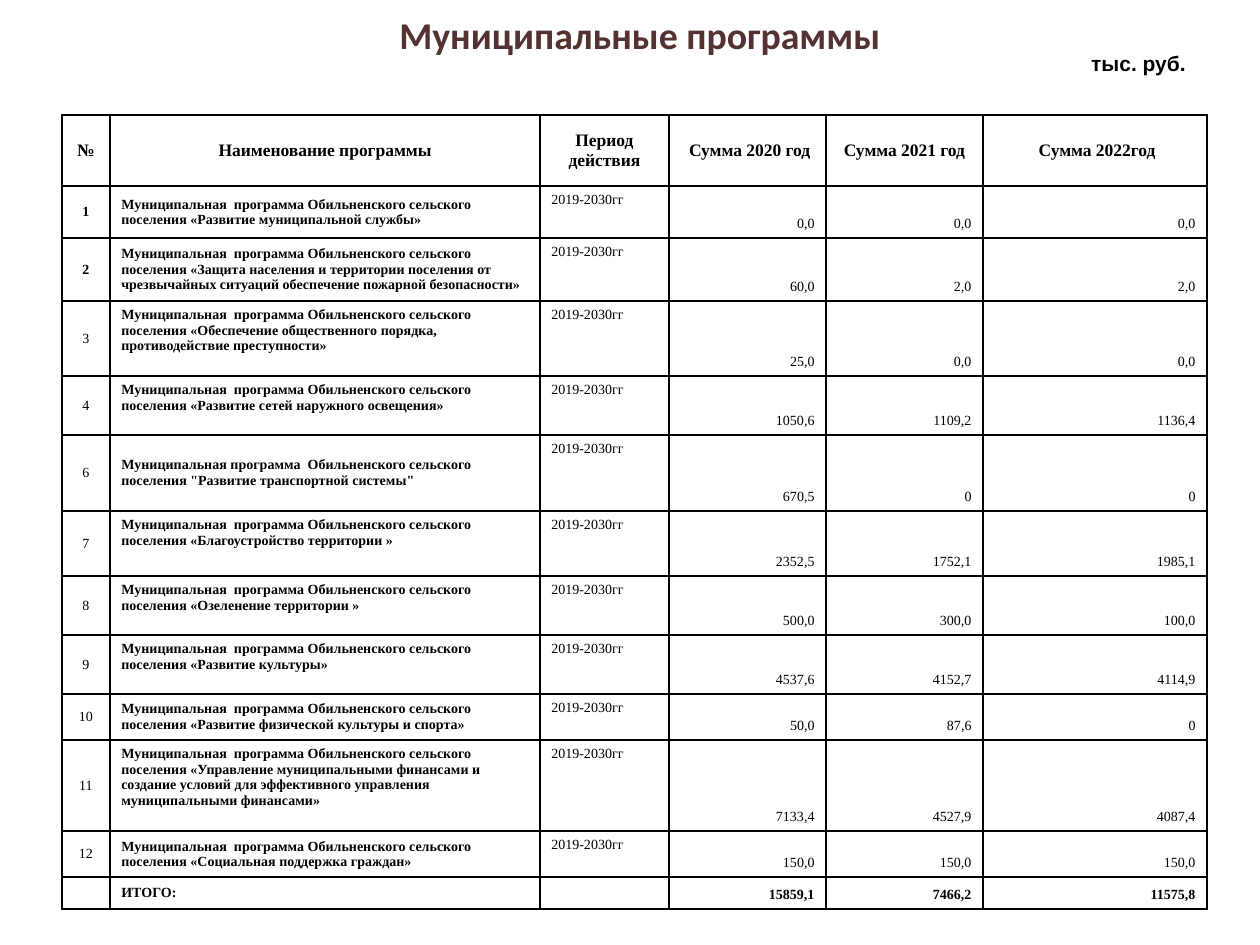
from lxml import etree
from pptx import Presentation
from pptx import util as u
from pptx.dml.color import RGBColor
from pptx.enum import text
from pptx.oxml import ns

PX = 914400 / 126
BLACK = RGBColor(0, 0, 0)
BROWN = RGBColor(0x54, 0x32, 0x32)
SERIF = "Times New Roman"
LEFT, MID, RIGHT = text.PP_ALIGN.LEFT, text.PP_ALIGN.CENTER, text.PP_ALIGN.RIGHT
TOP, CENTER, BOTTOM = (text.MSO_ANCHOR.TOP, text.MSO_ANCHOR.MIDDLE,
                       text.MSO_ANCHOR.BOTTOM)

COLS = [48, 430, 129, 157, 157, 224]
ROWS = [71, 52, 59, 75, 59, 76, 65, 59, 59, 46, 91, 45, 32]
HEAD = ["№", "Наименование программы", "Период действия",
        " Сумма 2020 год", "Сумма 2021 год", " Сумма 2022год"]
OWNER = "Муниципальная  программа Обильненского сельского поселения "
TERM = "2019-2030гг"
PLANS = [
    ("1", OWNER + "«Развитие муниципальной службы»", "0,0", "0,0", "0,0"),
    ("2", OWNER + "«Защита населения и территории поселения от чрезвычайных "
     "ситуаций обеспечение пожарной безопасности»", "60,0", "2,0", "2,0"),
    ("3", OWNER + "«Обеспечение общественного порядка, противодействие "
     "преступности»", "25,0", "0,0", "0,0"),
    ("4", OWNER + "«Развитие сетей наружного освещения»",
     "1050,6", "1109,2", "1136,4"),
    ("6", "Муниципальная программа  Обильненского сельского поселения "
     "\"Развитие транспортной системы\"", "670,5", "0", "0"),
    ("7", OWNER + "«Благоустройство территории »",
     "2352,5", "1752,1", "1985,1"),
    ("8", OWNER + "«Озеленение территории »", "500,0", "300,0", "100,0"),
    ("9", OWNER + "«Развитие культуры»", "4537,6", "4152,7", "4114,9"),
    ("10", OWNER + "«Развитие физической культуры и спорта»",
     "50,0", "87,6", "0"),
    ("11", OWNER + "«Управление муниципальными финансами и создание условий "
     "для эффективного управления муниципальными финансами»",
     "7133,4", "4527,9", "4087,4"),
    ("12", OWNER + "«Социальная поддержка граждан»",
     "150,0", "150,0", "150,0"),
]
TOTAL = ["", "ИТОГО:", "", "15859,1", "7466,2", "11575,8"]
BOLD_IDS = {"1", "2"}
HIGH_IDS = {"3", "4", "7", "8", "9", "11"}


def emu(*px):
    return [u.Emu(round(n * PX)) for n in px]


def style(para, face, size, color, bold, align):
    para.alignment = align
    font = para.font
    font.name, font.size, font.bold = face, u.Pt(size), bold
    font.color.rgb = color


def add_label(slide, box, words, face, size, color):
    frame = slide.shapes.add_textbox(*emu(*box)).text_frame
    frame.word_wrap = True
    frame.vertical_anchor = CENTER
    frame.margin_top = frame.margin_bottom = 0
    frame.text = words
    style(frame.paragraphs[0], face, size, color, True, MID)


def add_edges(cell):
    props = cell._tc.get_or_add_tcPr()
    for side in ("lnL", "lnR", "lnT", "lnB"):
        line = etree.SubElement(props, ns.qn("a:" + side), w=str(u.Pt(1)))
        fill = etree.SubElement(line, ns.qn("a:solidFill"))
        etree.SubElement(fill, ns.qn("a:srgbClr"), val=str(BLACK))


def fill_cell(cell, words, size, bold, align, anchor):
    add_edges(cell)
    cell.fill.background()
    cell.vertical_anchor = anchor
    cell.margin_left = cell.margin_right = u.Inches(0.09)
    cell.margin_top = cell.margin_bottom = u.Inches(0.05)
    cell.text = words
    para = cell.text_frame.paragraphs[0]
    style(para, SERIF, size, BLACK, bold, align)
    if not words:
        etree.SubElement(para._p, ns.qn("a:endParaRPr"), sz=str(size * 100))


def fill_row(table, row, words, bolds, anchors):
    aligns = [MID, LEFT, LEFT, RIGHT, RIGHT, RIGHT]
    for col, parts in enumerate(zip(words, bolds, aligns, anchors)):
        word, bold, align, anchor = parts
        fill_cell(table.cell(row, col), word, 8, bold, align, anchor)


def add_grid(slide, left, top):
    box = emu(left, top, sum(COLS), sum(ROWS))
    table = slide.shapes.add_table(len(ROWS), len(COLS), *box).table
    table.first_row = table.horz_banding = False
    for col, width in zip(table.columns, emu(*COLS)):
        col.width = width
    for row, height in zip(table.rows, emu(*ROWS)):
        row.height = height
    for col, words in enumerate(HEAD):
        fill_cell(table.cell(0, col), words, 10, True, MID, CENTER)
    for row, (num, name, *sums) in enumerate(PLANS, 1):
        bolds = [num in BOLD_IDS, True] + [False] * 4
        high = TOP if num in HIGH_IDS else CENTER
        fill_row(table, row, [num, name, TERM, *sums], bolds,
                 [CENTER, high, TOP] + [BOTTOM] * 3)
    fill_row(table, len(ROWS) - 1, TOTAL, [True] * 6,
             [CENTER] * 3 + [BOTTOM] * 3)


def main():
    deck = Presentation()
    deck.slide_width, deck.slide_height = emu(1260, 945)
    slide = deck.slides.add_slide(deck.slide_layouts[6])
    add_label(slide, (73, 11, 1134, 46), "Муниципальные программы",
              "Calibri", 21.6, BROWN)
    add_label(slide, (1050, 47, 177, 32), "тыс. руб.", "Arial", 12, BLACK)
    add_grid(slide, 62, 115)
    deck.save("out.pptx")


if __name__ == "__main__":
    main()
